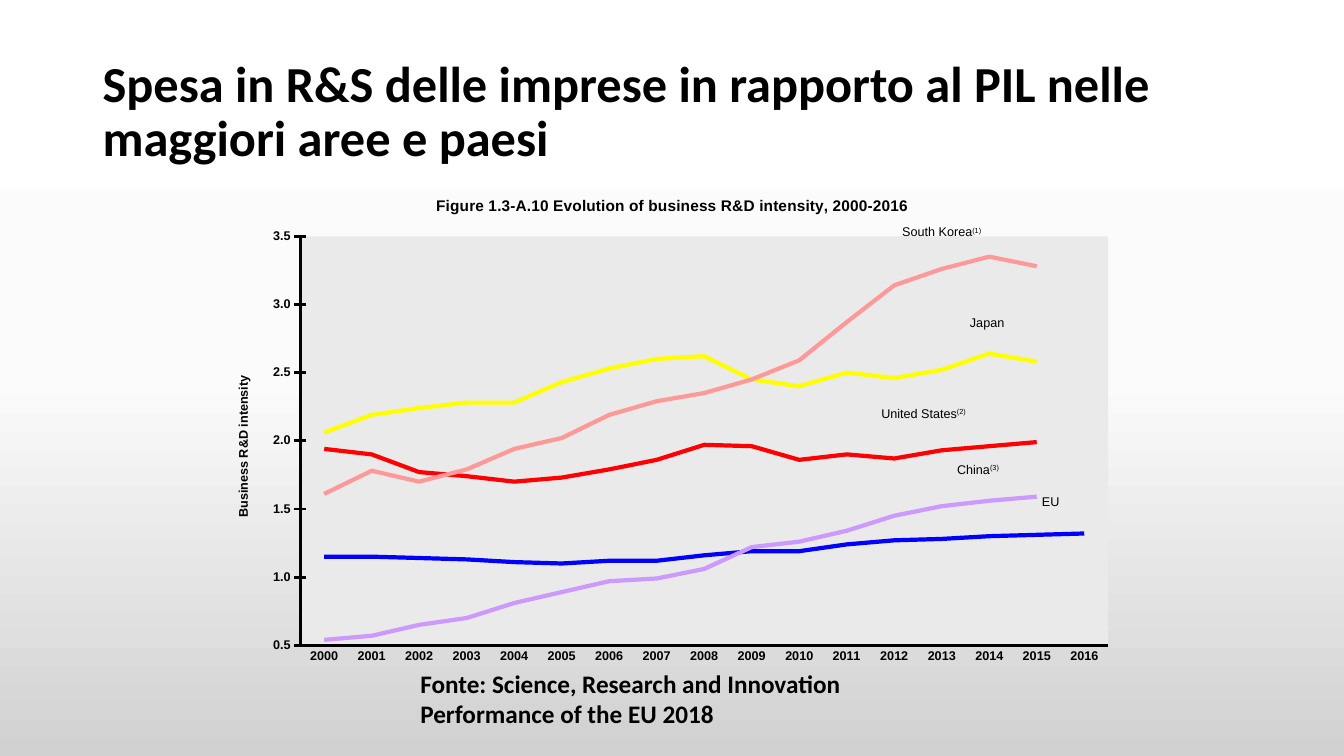
from dataclasses import dataclass

import pptx
import pptx.chart.data
import pptx.dml.color
import pptx.enum.chart
import pptx.enum.text
import pptx.oxml
import pptx.oxml.ns
import pptx.util
from pptx.util import Inches

RGBColor = pptx.dml.color.RGBColor
qn = pptx.oxml.ns.qn
BLACK = RGBColor(0x00, 0x00, 0x00)
BLUE = RGBColor(0x00, 0x00, 0xFF)
RED = RGBColor(0xFF, 0x00, 0x00)
YELLOW = RGBColor(0xFF, 0xFF, 0x00)
LILAC = RGBColor(0xCC, 0x99, 0xFF)
PINK = RGBColor(0xFF, 0x99, 0x99)
WHITE = RGBColor(0xFF, 0xFF, 0xFF)
NEAR_WHITE = RGBColor(0xFB, 0xFB, 0xFB)
GREY = RGBColor(0xD1, 0xD1, 0xD1)
PLOT_GREY = "EAEAEA"
LABEL_POINT = 13


@dataclass
class Area:
    label: str
    note: str
    color: RGBColor
    dx: float
    dy: float
    values: list[float | None]


AREAS = [
    Area("EU", "", BLUE, 0.12, -0.05,
         [1.15, 1.15, 1.14, 1.13, 1.11, 1.1, 1.12, 1.12, 1.16,
          1.19, 1.19, 1.24, 1.27, 1.28, 1.3, 1.31, 1.32]),
    Area("United States", "(2)", RED, -0.02, -0.05,
         [1.94, 1.9, 1.77, 1.74, 1.7, 1.73, 1.79, 1.86, 1.97,
          1.96, 1.86, 1.9, 1.87, 1.93, 1.96, 1.99, None]),
    Area("Japan", "", YELLOW, 0.05, -0.07,
         [2.06, 2.19, 2.24, 2.28, 2.28, 2.43, 2.53, 2.6, 2.62,
          2.45, 2.4, 2.5, 2.46, 2.52, 2.64, 2.58, None]),
    Area("China", "(3)", LILAC, 0.04, -0.05,
         [0.54, 0.57, 0.65, 0.7, 0.81, 0.89, 0.97, 0.99, 1.06,
          1.22, 1.26, 1.34, 1.45, 1.52, 1.56, 1.59, None]),
    Area("South Korea", "(1)", PINK, 0, -0.05,
         [1.61, 1.78, 1.7, 1.79, 1.94, 2.02, 2.19, 2.29, 2.35,
          2.45, 2.59, 2.87, 3.14, 3.26, 3.35, 3.28, None]),
]


def style_font(font, name: str, size: float, bold: bool = True) -> None:
    font.name = name
    font.size = pptx.util.Pt(size)
    font.bold = bold
    font.color.rgb = BLACK


def add_text(s, box: tuple, text: str, size: float):
    tf = s.shapes.add_textbox(*map(Inches, box)).text_frame
    tf.word_wrap = True
    tf.text = text
    style_font(tf.paragraphs[0].runs[0].font, "Calibri", size)
    return tf


def manual_layout(x: float, y: float, extra: str = "", modes: str = ""):
    return pptx.oxml.parse_xml(
        f'<c:layout {pptx.oxml.ns.nsdecls("c")}><c:manualLayout>{modes}'
        f'<c:x val="{x}"/><c:y val="{y}"/>{extra}</c:manualLayout></c:layout>')


def paint_background(s) -> None:
    fill = s.background.fill
    fill.gradient()
    fill.gradient_angle = 270
    first = next(s.element.iter(qn("a:gs")))
    first.addnext(pptx.oxml.parse_xml(
        f'<a:gs {pptx.oxml.ns.nsdecls("a")} pos="50000">'
        f'<a:srgbClr val="{NEAR_WHITE}"/></a:gs>'))
    stops = fill.gradient_stops
    for stop, color, position in zip(stops, (WHITE, NEAR_WHITE, GREY), (0, 0.5, 1)):
        stop.color.rgb = color
        stop.position = position


def style_axis(axis, tick) -> None:
    axis.has_major_gridlines = False
    axis.major_tick_mark = tick
    axis.minor_tick_mark = pptx.enum.chart.XL_TICK_MARK.NONE
    axis.format.line.color.rgb = BLACK
    axis.format.line.width = pptx.util.Pt(2)
    style_font(axis.tick_labels.font, "Arial", 9)


def style_series(ser, area: Area) -> None:
    ser.smooth = False
    ser.marker.style = pptx.enum.chart.XL_MARKER_STYLE.NONE
    ser.format.line.color.rgb = area.color
    ser.format.line.width = pptx.util.Pt(3)
    ser.data_labels.show_value = False
    label = ser.points[LABEL_POINT].data_label
    p = label.text_frame.paragraphs[0]
    for text in filter(None, (area.label, area.note)):
        r = p.add_run()
        r.text = text
        style_font(r.font, "Arial", 9, bold=False)
        if text == area.note:
            r.font._element.set("baseline", "30000")
    label.position = pptx.enum.chart.XL_LABEL_POSITION.ABOVE


def add_intensity_chart(s) -> None:
    data = pptx.chart.data.CategoryChartData(number_format="0.0")
    data.categories = [str(year) for year in range(2000, 2017)]
    for number, area in enumerate(AREAS, 1):
        data.add_series(f"Series {number}", area.values)
    chart = s.shapes.add_chart(
        pptx.enum.chart.XL_CHART_TYPE.LINE,
        Inches(2.17), Inches(1.75), Inches(9), Inches(4.95), data).chart
    style_font(chart.font, "Arial", 9)
    chart.has_legend = False
    chart.has_title = True
    chart.plots[0].vary_by_categories = False
    tick = pptx.enum.chart.XL_TICK_MARK
    style_axis(chart.category_axis, tick.NONE)
    axis = chart.value_axis
    style_axis(axis, tick.CROSS)
    axis.minimum_scale, axis.maximum_scale, axis.major_unit = 0.5, 3.5, 0.5
    axis.tick_labels.number_format = "0.0"
    axis.tick_labels.number_format_is_linked = False
    axis.has_title = True
    titles = [
        (chart.chart_title, "Figure 1.3-A.10 Evolution of business R&D intensity, 2000-2016", 11),
        (axis.axis_title, "Business R&D intensity", 9),
    ]
    for title, text, size in titles:
        tf = title.text_frame
        tf.text = text
        style_font(tf.paragraphs[0].runs[0].font, "Arial", size)
    for ser, area in zip(chart.plots[0].series, AREAS):
        style_series(ser, area)
    for label, area in zip(list(chart.element.iter(qn("c:dLbl"))), AREAS):
        for old in label.findall(qn("c:layout")):
            label.remove(old)
        label.insert(1, manual_layout(area.dx, area.dy))
    for leader in chart.element.iter(qn("c:showLeaderLines")):
        leader.set("val", "0")
    plot = next(chart.element.iter(qn("c:plotArea")))
    for old in plot.findall(qn("c:layout")):
        plot.remove(old)
    plot.insert(0, manual_layout(
        0.09, 0.12, '<c:w val="0.89"/><c:h val="0.82"/>',
        '<c:layoutTarget val="inner"/><c:xMode val="edge"/><c:yMode val="edge"/>'))
    plot.append(pptx.oxml.parse_xml(
        f'<c:spPr {pptx.oxml.ns.nsdecls("c", "a")}><a:solidFill>'
        f'<a:srgbClr val="{PLOT_GREY}"/></a:solidFill></c:spPr>'))


def main() -> None:
    prs = pptx.Presentation()
    prs.slide_width, prs.slide_height = Inches(13.33), Inches(7.5)
    s = prs.slides.add_slide(prs.slide_layouts[6])
    paint_background(s)
    tf = add_text(s, (0.92, 0.4, 11.5, 1.45),
                  "Spesa in R&S delle imprese in rapporto al PIL nelle maggiori aree e paesi", 36)
    tf.vertical_anchor = pptx.enum.text.MSO_ANCHOR.MIDDLE
    tf.paragraphs[0].line_spacing = 0.9
    add_intensity_chart(s)
    tf = add_text(s, (4.07, 6.58, 4.41, 0.71),
                  "Fonte: Science, Research and Innovation Performance of the EU 2018", 18)
    tf.auto_size = pptx.enum.text.MSO_AUTO_SIZE.SHAPE_TO_FIT_TEXT
    prs.save("out.pptx")


if __name__ == "__main__":
    main()
